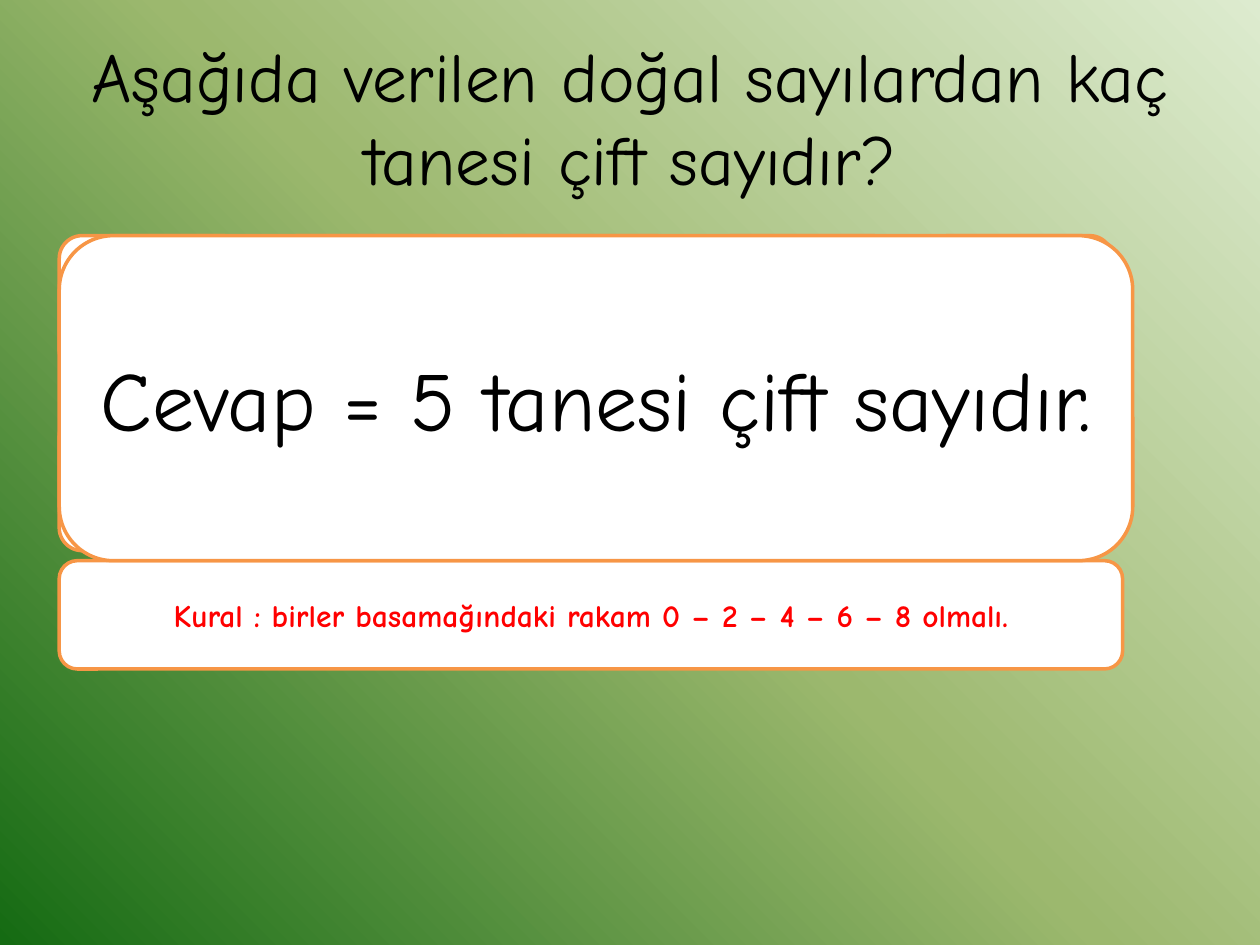
from copy import deepcopy
from dataclasses import dataclass

from pptx import Presentation
from pptx.dml.color import RGBColor
from pptx.enum.shapes import MSO_SHAPE
from pptx.enum.text import MSO_ANCHOR, MSO_AUTO_SIZE, PP_ALIGN
from pptx.oxml.ns import qn
from pptx.slide import Slide
from pptx.text.text import TextFrame
from pptx.util import Inches, Pt

FONT = "Comic Neue"
LEFT, TOP = 0.47, 1.87
COL, ROW = 1.72, 1.41
STOPS = [(0, "DDEBCF"), (50, "9CB86E"), (100, "156B13")]


@dataclass
class Label:
    text: str
    size: float
    color: str = "000000"
    bold: bool = False


@dataclass
class Card:
    left: float
    top: float
    width: float = 1.48
    height: float = 1.09
    label: Label | None = None


def tint(code: str) -> RGBColor:
    return RGBColor.from_string(code)


def write(frame: TextFrame, label: Label) -> None:
    frame.word_wrap = True
    frame.auto_size = MSO_AUTO_SIZE.NONE
    frame.vertical_anchor = MSO_ANCHOR.MIDDLE
    para = frame.paragraphs[0]
    para.alignment = PP_ALIGN.CENTER
    run = para.add_run()
    run.text = label.text
    font = run.font
    font.name, font.size, font.bold = FONT, Pt(label.size), label.bold
    font.color.rgb = tint(label.color)


def draw(slide: Slide, card: Card) -> None:
    box = [Inches(n) for n in (card.left, card.top, card.width, card.height)]
    shape = slide.shapes.add_shape(MSO_SHAPE.ROUNDED_RECTANGLE, *box)
    shape.shadow.inherit = False
    shape.fill.solid()
    shape.fill.fore_color.rgb = tint("FFFFFF")
    shape.line.color.rgb = tint("F79646")
    shape.line.width = Pt(2)
    if card.label:
        write(shape.text_frame, card.label)


def shade(slide: Slide) -> None:
    """Fill the background from light top right to dark bottom left."""
    fill = slide.background.fill
    fill.gradient()
    fill.gradient_angle = 225  # counter-clockwise
    stops = next(slide.element.iter(qn("a:gsLst")))
    stops.append(deepcopy(stops[-1]))
    for stop, (share, code) in zip(fill.gradient_stops, STOPS):
        stop.position = share / 100
        stop.color.rgb = tint(code)


def main() -> None:
    deck = Presentation()
    deck.slide_width, deck.slide_height = Inches(10), Inches(7.5)
    slide = deck.slides.add_slide(deck.slide_layouts[5])
    shade(slide)

    title = slide.shapes.title
    title.left, title.top = Inches(0.5), Inches(0.3)
    title.width, title.height = Inches(9), Inches(1.25)
    write(title.text_frame, Label(
        "Aşağıda verilen doğal sayılardan kaç tanesi çift sayıdır?", 39.6))

    cells = [(col, 0) for col in range(5)] + [(0, 1)]
    cards = [Card(LEFT + col * COL, TOP + row * ROW) for col, row in cells]
    rule = Label("Kural : birler basamağındaki rakam 0 – 2 – 4 – 6 – 8 olmalı.",
                 18, "FF0000", True)
    answer = Label("Cevap = 5 tanesi çift sayıdır.", 48)
    cards += [Card(LEFT, 4.45, 8.44, 0.86, rule),
              Card(LEFT, TOP, 8.52, 2.58, answer)]
    for card in cards:
        draw(slide, card)
    deck.save("out.pptx")


if __name__ == "__main__":
    main()
